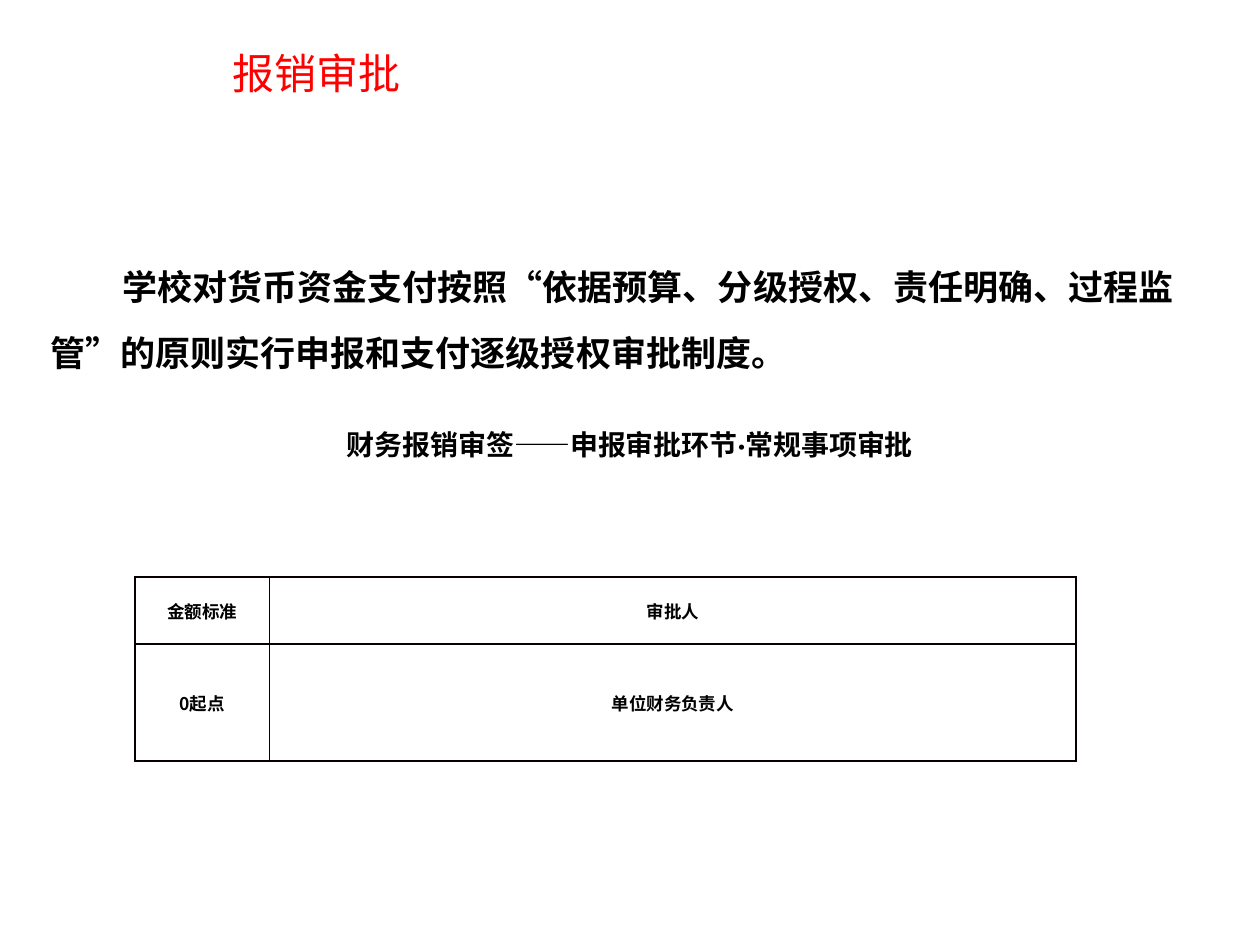
from pptx import Presentation
from pptx.dml.color import RGBColor as Rgb
from pptx.enum.text import MSO_ANCHOR as Anchor, PP_ALIGN as Align
from pptx.oxml.xmlchemy import OxmlElement as Node
from pptx.util import Inches, Pt

# Content
TITLE = "报销审批"
RULE = "学校对货币资金支付按照“依据预算、分级授权、责任明确、过程监管”的原则实行申报和支付逐级授权审批制度。"
HEAD = ["财务报销审签——申报审批环节·", "常规事项审批"]
ROWS = [("金额标准", "审批人"), ("0起点", "单位财务负责人")]

# Theme: font, size, colour, bold
HAN = "Noto Sans CJK SC"
THEME = {
    "title": (HAN, 24, "FF0000", False),
    "rule": ("Arial", 20, "000000", True),
    "head": ("Calibri", 16, "000000", True),
    "tail": ("Arial", 16, "000000", True),
    "cell": (HAN, 10, "000000", True),
}
EDGE = "080000"

# Layout in inches
WIDE, HIGH = 10, 7.5
SPOTS = {
    "title": (1.75, 0.33, 5.5, 0.5),
    "rule": (0.3, 1.86, 9.45, 5.08),
    "head": (2.22, 3.07, 5.56, 0.64),
}
COLS, TALL = (1.07, 6.4), (0.53, 0.93)
GRID = (1.07, 4.58, sum(COLS), sum(TALL))


def style(run, key):
    face, size, tint, bold = THEME[key]
    font = run.font
    font.name, font.size, font.bold = face, Pt(size), bold
    font.color.rgb = Rgb.from_string(tint)
    asian = Node("a:ea")
    asian.set("typeface", HAN)
    font._element.find("{*}latin").addnext(asian)


def write(slide, key, parts, anchor=Anchor.TOP):
    box = slide.shapes.add_textbox(*map(Inches, SPOTS[key]))
    frame = box.text_frame
    frame.word_wrap, frame.vertical_anchor = True, anchor
    para = frame.paragraphs[0]
    for text, look in parts:
        run = para.add_run()
        run.text = text
        style(run, look)
    return para


def border(cell):
    props = cell._tc.get_or_add_tcPr()
    for spot, side in enumerate(("lnL", "lnR", "lnT", "lnB")):
        line, fill, tint = Node("a:" + side), Node("a:solidFill"), Node("a:srgbClr")
        line.set("w", str(Pt(1)))
        tint.set("val", EDGE)
        fill.append(tint)
        line.append(fill)
        props.insert(spot, line)


def grid(slide):
    table = slide.shapes.add_table(len(ROWS), len(COLS), *map(Inches, GRID)).table
    table.first_row = table.horz_banding = False
    for col, size in zip(table.columns, COLS):
        col.width = Inches(size)
    for row, size, texts in zip(table.rows, TALL, ROWS):
        row.height = Inches(size)
        for cell, text in zip(row.cells, texts):
            cell.text_frame.text = text
            cell.vertical_anchor = Anchor.MIDDLE
            cell.margin_left = cell.margin_right = Inches(0.07)
            cell.margin_top, cell.margin_bottom = Inches(0.01), 0
            cell.fill.background()
            border(cell)
            para = cell.text_frame.paragraphs[0]
            para.alignment = Align.CENTER
            style(para.runs[0], "cell")


def main():
    deck = Presentation()
    deck.slide_width, deck.slide_height = Inches(WIDE), Inches(HIGH)
    slide = deck.slides.add_slide(deck.slide_layouts[6])

    # Rule with a first-line indent
    para = write(slide, "rule", [(RULE, "rule")])
    para.line_spacing = Pt(38)
    para._p.get_or_add_pPr().set("indent", str(Inches(0.57)))

    # Title and table heading
    write(slide, "title", [(TITLE, "title")])
    para = write(slide, "head", zip(HEAD, ("head", "tail")), Anchor.BOTTOM)
    para.alignment = Align.CENTER

    # Approval table
    grid(slide)
    deck.save("out.pptx")


if __name__ == "__main__":
    main()
